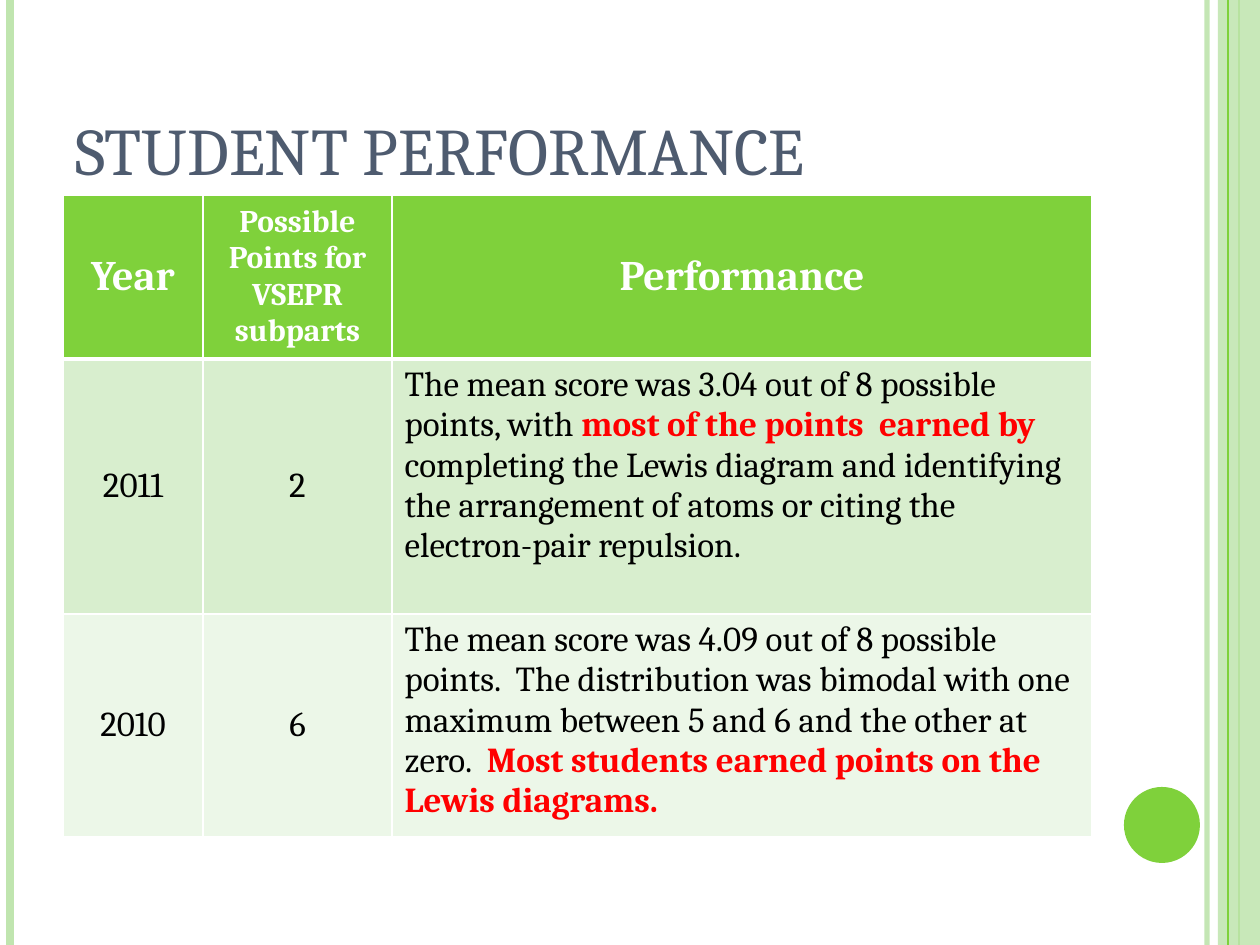
from lxml import etree
from pptx import Presentation
from pptx import util as u
from pptx.dml import color
from pptx.enum import shapes, text
from pptx.oxml import ns

PX = 914400 / 126
WIDE, HIGH = 1260, 945
GREEN, PALE, WHITE, BLACK, RED = "7FD13B", "C0E5AF", "FFFFFF", "000000", "FF0000"
MID, LEFT = text.PP_ALIGN.CENTER, text.PP_ALIGN.LEFT


def px(*vals):
    return [u.Emu(round(v * PX)) for v in vals]


def paint(part, tint, alpha=100):
    if hasattr(part, "solid"):
        part.solid()
        part = part.fore_color
    part.rgb = color.RGBColor.from_string(tint)
    if alpha < 100:
        node = part._xFill.find(ns.qn("a:srgbClr"))
        etree.SubElement(node, ns.qn("a:alpha"), val=str(alpha * 1000))


def apply(item, looks):
    for key, val in looks.items():
        setattr(item, key, val)


def write(para, words, tint, **looks):
    run = para.add_run()
    run.text = words
    apply(run.font, {"name": "Cambria", **looks})
    paint(run.font.color, tint)


def rule(slide, x, top, high, tint, width, alpha=100):
    line = slide.shapes.add_connector(
        shapes.MSO_CONNECTOR.STRAIGHT, *px(x, top, x, top + high))
    line.line.width = u.Pt(width)
    paint(line.line.fill, tint, alpha)
    etree.SubElement(line._element.spPr, ns.qn("a:effectLst"))
    return line


def solid(slide, kind, box, tint, alpha=100):
    shape = slide.shapes.add_shape(kind, *px(*box))
    shape.shadow.inherit = False
    shape.line.fill.background()
    paint(shape.fill, tint, alpha)
    return shape


def frame(slide, box):
    x, y, wide, high = box
    rule(slide, x + 1207, y, high, PALE, 3, 93)
    rule(slide, x + 10, y, high, PALE, 4.5)
    seam = rule(slide, x + 1239, y, high, GREEN, 1.5)
    band = solid(slide, shapes.MSO_SHAPE.RECTANGLE,
                 (x + wide - 42, y, 42, high), PALE, 87)
    seam.begin_connect(band, 0)
    seam.end_connect(band, 2)
    rule(slide, x + 1228, y, high, GREEN, 0.75)
    solid(slide, shapes.MSO_SHAPE.OVAL, (x + 1124, y + 787, 76, 76), GREEN)


def title(slide, box, words):
    body = slide.shapes.add_textbox(*px(*box)).text_frame
    apply(body, {"word_wrap": True, "vertical_anchor": text.MSO_ANCHOR.BOTTOM})
    write(body.paragraphs[0], words, "4E5B6F", size=u.Pt(38))


def edge(cell, widths):
    props = cell._tc.get_or_add_tcPr()
    for side, width in zip("LRTB", widths):
        line = etree.SubElement(props, ns.qn("a:ln" + side), w=str(u.Pt(width)))
        fill = etree.SubElement(line, ns.qn("a:solidFill"))
        etree.SubElement(fill, ns.qn("a:srgbClr"), val=WHITE)


def fill(cell, runs, back, widths, align, anchor, size, tint, bold):
    edge(cell, widths)
    paint(cell.fill, back)
    cell.vertical_anchor = anchor
    para = cell.text_frame.paragraphs[0]
    para.alignment = align
    for words, hot in runs:
        write(para, words, RED if hot else tint, size=u.Pt(size), bold=bold or hot)


def scores(slide, box, cols, rows, data):
    grid = slide.shapes.add_table(len(rows), len(cols), *px(*box)).table
    for col, wide in zip(grid.columns, px(*cols)):
        col.width = wide
    for row, high in zip(grid.rows, px(*rows)):
        row.height = high
    backs = [GREEN, "D8EECE", "ECF7E8"]
    edges = [(1, 1, 1, 3), (1, 1, 3, 1), (1, 1, 1, 1)]
    for r, line in enumerate(data):
        for c, runs in enumerate(line):
            head, prose = r == 0, r > 0 and c == 2
            size = (18 if c == 1 else 24) if head else 20
            fill(grid.cell(r, c), runs, backs[r], edges[r],
                 LEFT if prose else MID,
                 text.MSO_ANCHOR.TOP if prose else text.MSO_ANCHOR.MIDDLE,
                 size, WHITE if head else BLACK, head)


def plain(*words):
    return [[(word, False)] for word in words]


DATA = [
    plain("Year", "Possible Points for VSEPR subparts", "Performance"),
    plain("2011", "2") + [[
        ("The mean score was 3.04 out of 8 possible points, with ", False),
        ("most of the points  earned by", True),
        (" completing the Lewis diagram and identifying the arrangement of atoms "
         "or citing the electron-pair repulsion.", False)]],
    plain("2010", "6") + [[
        ("The mean score was 4.09 out of 8 possible points.  The distribution was "
         "bimodal with one maximum between 5 and 6 and the other at zero.  ", False),
        ("Most students earned points on the Lewis diagrams.", True)]],
]


def main():
    deck = Presentation()
    deck.slide_width, deck.slide_height = px(WIDE, HIGH)
    slide = deck.slides.add_slide(deck.slide_layouts[6])
    frame(slide, (0, 0, WIDE, HIGH))
    title(slide, (63, 38, 1029, 157), "STUDENT PERFORMANCE")
    scores(slide, (63, 195, 1029, 626), (140, 189, 700), (157, 255, 214), DATA)
    deck.save("out.pptx")


if __name__ == "__main__":
    main()
